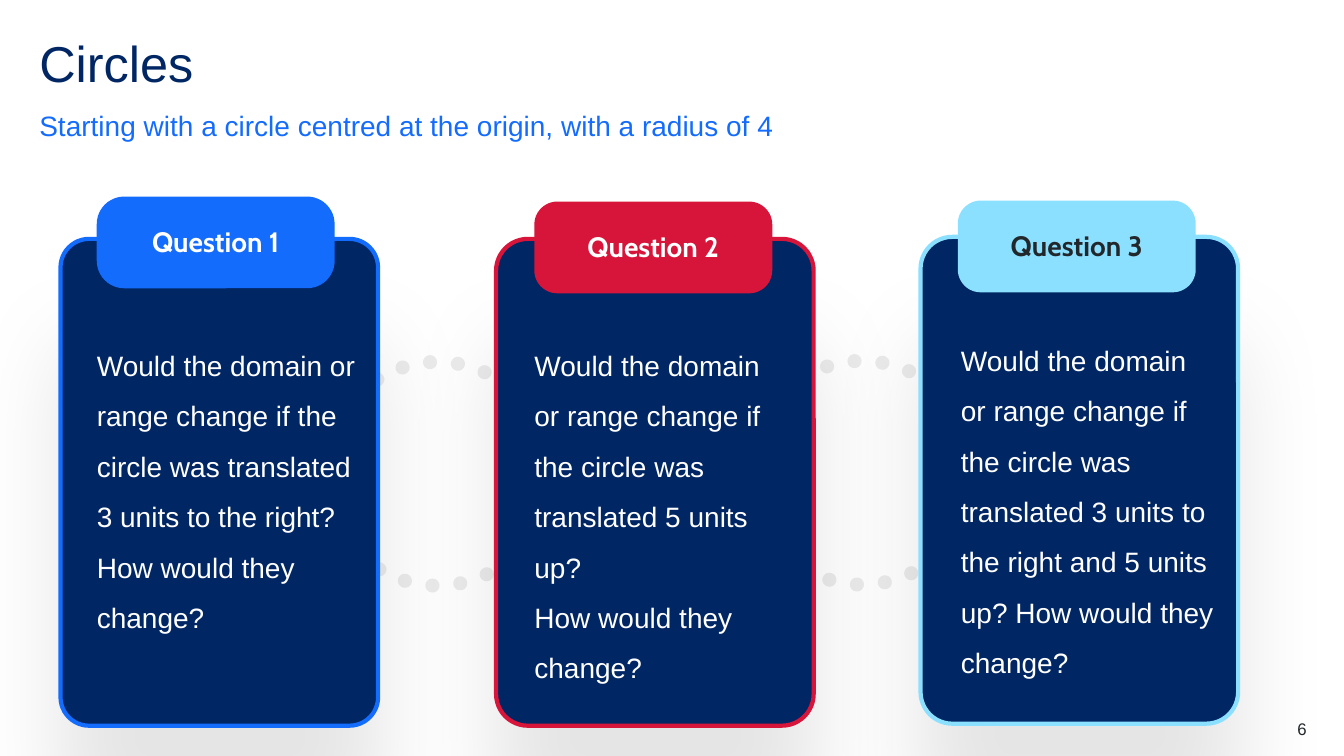
from lxml.etree import SubElement
from pptx import Presentation
from pptx.dml.color import RGBColor
from pptx.enum.dml import MSO_LINE_DASH_STYLE as DASH
from pptx.enum.shapes import MSO_SHAPE as SHAPE
from pptx.enum.text import MSO_ANCHOR as ANCHOR, MSO_AUTO_SIZE as AUTO_SIZE, PP_ALIGN as ALIGN
from pptx.oxml.ns import qn
from pptx.util import Pt

PX = 9144  # EMU per px, 100 px to the inch
NAVY, BLUE, RED, SKY = "002664", "146CFD", "D7153A", "8CE0FF"
WHITE, INK, GREY = "FFFFFF", "22272B", "EBEBEB"

# label, accent, label colour, label box, card box, corner ratios, text box, paragraphs
QUESTIONS = [
    ("Question 1", BLUE, WHITE, (96, 195, 236, 91), (60, 237, 315, 483), (0.3, 0.09),
     (96, 329, 259, 297),
     ["Would the domain or range change if the circle was translated 3 units to the right? "
      "How would they change?"]),
    ("Question 2", RED, WHITE, (530, 200, 236, 91), (492, 237, 315, 483), (0.25, 0.1),
     (530, 329, 252, 347),
     ["Would the domain or range change if the circle was translated 5 units up?",
      "How would they change?"]),
    ("Question 3", SKY, INK, (950, 199, 236, 91), (913, 235, 315, 483), (0.25, 0.1),
     (953, 324, 252, 347),
     ["Would the domain or range change if the circle was translated 3 units to the right "
      "and 5 units up? How would they change?"]),
]


def rgb(colour):
    return RGBColor.from_string(colour)


class SlideBuilder:
    def __init__(self, presentation):
        self.slide = presentation.slides.add_slide(presentation.slide_layouts[5])
        self.shapes = self.slide.shapes

    def fill_text(self, shape, paragraphs, size, colour, font="Arial", bold=False,
                  align=ALIGN.LEFT, anchor=ANCHOR.TOP, spacing=1.0, after=0, insets=(0, 0)):
        frame = shape.text_frame
        frame.word_wrap = True
        frame.auto_size = AUTO_SIZE.NONE
        frame.vertical_anchor = anchor
        frame.margin_left = frame.margin_right = insets[0] * PX
        frame.margin_top = frame.margin_bottom = insets[1] * PX
        frame.text = "\n".join(paragraphs)
        for paragraph in frame.paragraphs:
            paragraph.alignment = align
            paragraph.line_spacing = spacing
            paragraph.space_before = Pt(0)
            paragraph.space_after = Pt(after)
            for run in paragraph.runs:
                run.font.name = font
                run.font.size = Pt(size)
                run.font.bold = bold
                run.font.color.rgb = rgb(colour)

    def title(self, box, text):
        title = self.shapes.title
        title.left, title.top, title.width, title.height = (length * PX for length in box)
        self.fill_text(title, [text], 36, NAVY, spacing=0.9)

    def text(self, box, paragraphs, size, colour, **style):
        self.fill_text(self.shapes.add_textbox(*(length * PX for length in box)),
                       paragraphs, size, colour, **style)

    def shape(self, kind, box, fill=None, line=None, width=0, corner=None):
        shape = self.shapes.add_shape(kind, *(length * PX for length in box))
        shape.shadow.inherit = False
        if corner is not None:
            shape.adjustments[0] = corner
        if fill:
            shape.fill.solid()
            shape.fill.fore_color.rgb = rgb(fill)
        else:
            shape.fill.background()
        if line:
            shape.line.color.rgb = rgb(line)
            shape.line.width = Pt(width)
        else:
            shape.line.fill.background()
        return shape

    def dotted_circle(self, left, top, size):
        circle = self.shape(SHAPE.OVAL, (left, top, size, size), line=GREY, width=10)
        circle.line.dash_style = DASH.ROUND_DOT
        circle._element.spPr.find(qn("a:ln")).set("cap", "rnd")

    def card(self, box, accent, corner):
        """Navy card with a coloured outline and a soft shadow below it."""
        card = self.shape(SHAPE.ROUNDED_RECTANGLE, box, NAVY, accent, 3, corner)
        effects = card._element.spPr.find(qn("a:effectLst"))
        shadow = SubElement(effects, qn("a:outerShdw"), blurRad=str(Pt(67)), dist=str(Pt(74)),
                            dir="5400000", algn="t", rotWithShape="0")
        colour = SubElement(shadow, qn("a:srgbClr"), val="000000")
        SubElement(colour, qn("a:alpha"), val="10000")

    def label(self, box, text, fill, colour, corner):
        label = self.shape(SHAPE.ROUNDED_RECTANGLE, box, fill, corner=corner)
        self.fill_text(label, [text], 20, colour, font="Cabin", bold=True, align=ALIGN.CENTER,
                       anchor=ANCHOR.MIDDLE, spacing=Pt(21.7), insets=(20, 4))


def main():
    presentation = Presentation()
    presentation.slide_width, presentation.slide_height = 1333 * PX, 750 * PX
    builder = SlideBuilder(presentation)
    builder.title((39, 39, 1256, 60), "Circles")
    builder.text((39, 107, 1256, 34),
                 ["Starting with a circle centred at the origin, with a radius of 4"],
                 20, BLUE, anchor=ANCHOR.BOTTOM, spacing=1.5, after=12)
    builder.dotted_circle(744, 358, 222)
    builder.dotted_circle(323, 359, 222)
    for _, accent, _, _, card_box, corners, _, _ in QUESTIONS:
        builder.card(card_box, accent, corners[1])
    for name, accent, colour, label_box, _, corners, text_box, paragraphs in QUESTIONS:
        builder.label(label_box, name, accent, colour, corners[0])
        builder.text(text_box, paragraphs, 20, WHITE, spacing=1.5)
    builder.text((1217, 713, 79, 20), ["6"], 12, INK, align=ALIGN.RIGHT)
    presentation.save("out.pptx")


if __name__ == "__main__":
    main()
